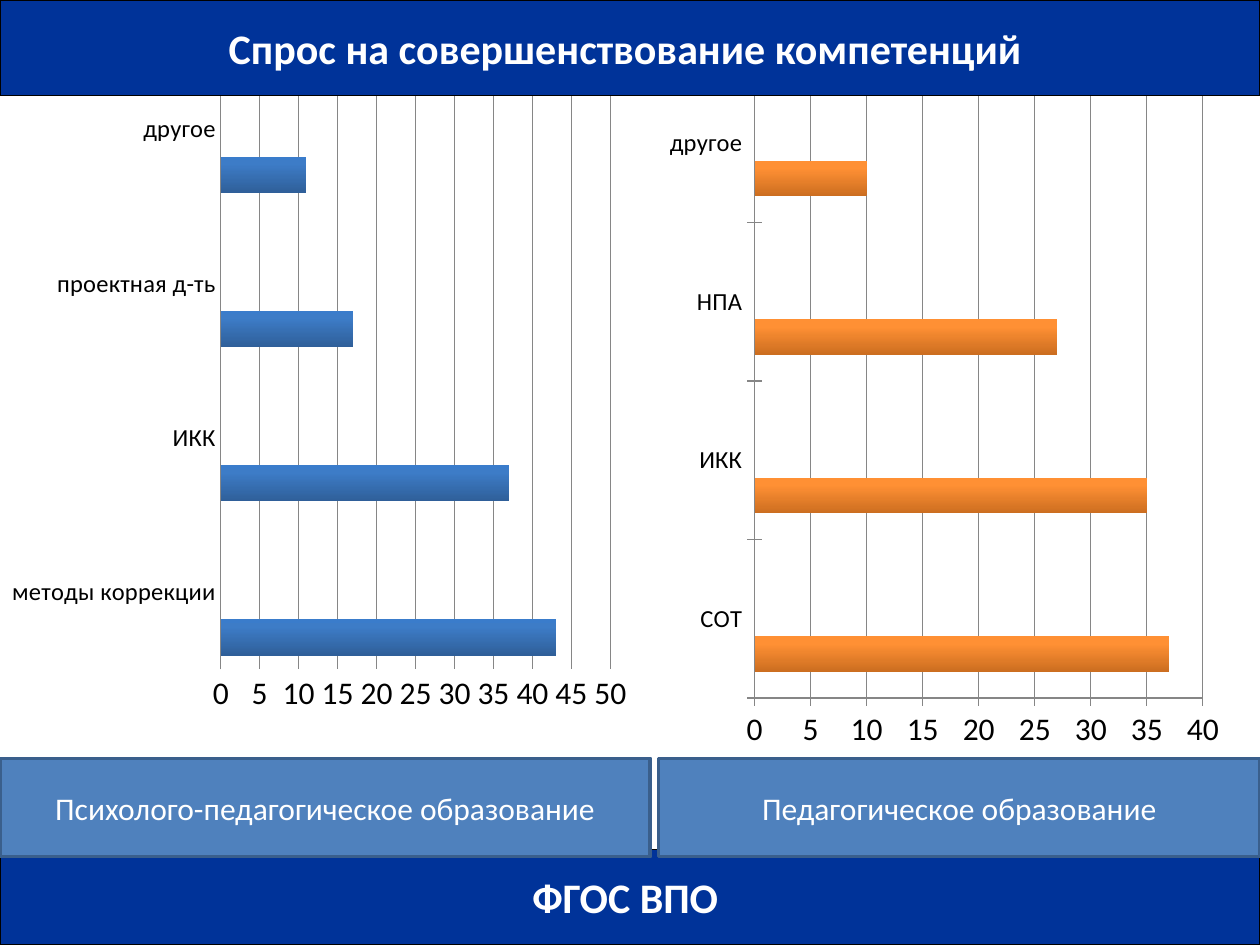
from copy import deepcopy

from lxml.etree import SubElement
from pptx import Presentation
from pptx.chart.data import CategoryChartData
from pptx.dml.color import RGBColor
from pptx.enum.chart import XL_CHART_TYPE, XL_TICK_MARK
from pptx.enum.shapes import MSO_SHAPE
from pptx.enum.text import MSO_ANCHOR, MSO_AUTO_SIZE, PP_ALIGN
from pptx.oxml.ns import qn
from pptx.util import Cm, Pt

FONT = "Calibri"
COLORS = {
    "banner": "003399", "black": "000000", "white": "FFFFFF",
    "box": "4F81BD", "box_line": "3A5F8C", "grid": "868686",
    "second": "C0504D", "third": "9BBB59",
}
WIDTH, HEIGHT, BANNER_HEIGHT = 25.4, 19.05, 1.93
TITLE = "Спрос на совершенствование компетенций "
FOOTER = "ФГОС ВПО "
BOXES = [
    ("Психолого-педагогическое образование", (0, 15.29, 13.11, 1.98)),
    ("Педагогическое образование", (13.28, 15.29, 12.12, 1.98)),
]
PEDAGOGY = {
    "place": (13.28, 0.99, 11.51, 14.38),
    "plot": {"x": 0.168, "y": 0.021, "w": 0.785, "h": 0.889},
    "data": {"СОТ": 37, "ИКК": 35, "НПА": 27, "другое": 10},
    "gradient": [(0, "CC6E20"), (0.8, "FF9034"), (1, "FF9136")],
    "maximum": 40, "gap": 150, "overlap": 0,
    "tick": XL_TICK_MARK.CROSS, "value_line": True,
}
PSYCHOLOGY = {
    "place": (0, 0.79, 12.9, 13.87),
    "plot": {"x": 0.345, "y": 0.019, "w": 0.609, "h": 0.897},
    "data": {"методы коррекции": 43, "ИКК": 37, "проектная д-ть": 17, "другое": 11},
    "gradient": [(0, "2F5F99"), (0.8, "3D7CC7"), (1, "3A7CCB")],
    "maximum": 50, "gap": 75, "overlap": -25,
    "tick": XL_TICK_MARK.NONE, "value_line": False,
}


def rgb(name):
    return RGBColor.from_string(COLORS.get(name, name))


def write_text(shape, text, size=18, bold=False, wrap=True):
    frame = shape.text_frame
    frame.auto_size = MSO_AUTO_SIZE.NONE
    frame.word_wrap = wrap
    frame.vertical_anchor = MSO_ANCHOR.MIDDLE
    paragraph = frame.paragraphs[0]
    paragraph.alignment = PP_ALIGN.CENTER
    run = paragraph.add_run()
    run.text = text
    run.font.name, run.font.size, run.font.bold = FONT, Pt(size), bold
    run.font.color.rgb = rgb("white")


def paint(shape, fill, line, width):
    shape.fill.solid()
    shape.fill.fore_color.rgb = rgb(fill)
    shape.line.color.rgb = rgb(line)
    shape.line.width = Pt(width)


def add_rectangle(slide, place, fill, line, width):
    shape = slide.shapes.add_shape(MSO_SHAPE.RECTANGLE, *map(Cm, place))
    shape.shadow.inherit = False
    paint(shape, fill, line, width)
    return shape


def set_gradient(fill, stops):
    fill.gradient()
    fill.gradient_angle = 90
    stop_list = fill.gradient_stops[0]._gs.getparent()
    stop_list.append(deepcopy(stop_list[-1]))
    for stop, (position, color) in zip(fill.gradient_stops, stops):
        stop.position = position
        stop.color.rgb = rgb(color)


def set_plot_area(chart, plot):
    plot_area = chart._chartSpace.chart.plotArea
    layout = plot_area.find(qn("c:layout"))
    if layout is None:
        layout = SubElement(plot_area, qn("c:layout"))
        plot_area.insert(0, layout)
    manual = SubElement(layout, qn("c:manualLayout"))
    settings = {"layoutTarget": "inner", "xMode": "edge", "yMode": "edge", **plot}
    for tag, value in settings.items():
        SubElement(manual, qn(f"c:{tag}")).set("val", str(value))


def add_bar_chart(slide, settings):
    values = settings["data"]
    data = CategoryChartData()
    data.categories = list(values)
    data.add_series("Series 1", list(values.values()))
    for name in ("Series 2", "Series 3"):
        data.add_series(name, [None] * len(values))
    chart = slide.shapes.add_chart(
        XL_CHART_TYPE.BAR_CLUSTERED, *map(Cm, settings["place"]), data).chart
    chart.has_legend = chart.has_title = False
    chart.font.name, chart.font.size = FONT, Pt(18)
    chart.font.color.rgb = rgb("black")
    set_plot_area(chart, settings["plot"])

    bars = chart.plots[0]
    bars.vary_by_categories = False
    bars.gap_width, bars.overlap = settings["gap"], settings["overlap"]
    first, *others = bars.series
    set_gradient(first.format.fill, settings["gradient"])
    for series, color in zip(others, ("second", "third")):
        series.format.fill.solid()
        series.format.fill.fore_color.rgb = rgb(color)

    category_axis, value_axis = chart.category_axis, chart.value_axis
    category_axis.tick_labels.font.size = Pt(14)
    value_axis.minimum_scale, value_axis.maximum_scale = 0, settings["maximum"]
    value_axis.major_unit = 5
    value_axis.has_major_gridlines = True
    for axis in (category_axis, value_axis):
        axis.major_tick_mark = settings["tick"]
        axis.minor_tick_mark = XL_TICK_MARK.NONE
    for line in (category_axis.format.line, value_axis.format.line,
                 value_axis.major_gridlines.format.line):
        line.color.rgb = rgb("grid")
        line.width = Pt(0.75)
    if not settings["value_line"]:
        value_axis.format.line.fill.background()


def main():
    presentation = Presentation()
    presentation.slide_width, presentation.slide_height = Cm(WIDTH), Cm(HEIGHT)
    slide = presentation.slides.add_slide(presentation.slide_layouts[5])

    add_bar_chart(slide, PEDAGOGY)
    footer_place = (0, HEIGHT - BANNER_HEIGHT, WIDTH, BANNER_HEIGHT)
    footer = add_rectangle(slide, footer_place, "banner", "black", 0.75)
    write_text(footer, FOOTER, size=24, bold=True, wrap=False)
    for text, place in BOXES:
        write_text(add_rectangle(slide, place, "box", "box_line", 2), text)
    add_bar_chart(slide, PSYCHOLOGY)

    title = slide.shapes.title
    title.left, title.top = Cm(0), Cm(0)
    title.width, title.height = Cm(WIDTH), Cm(BANNER_HEIGHT)
    paint(title, "banner", "black", 0.75)
    write_text(title, TITLE, size=24, bold=True, wrap=False)
    title.element.getparent().append(title.element)

    presentation.save("out.pptx")


if __name__ == "__main__":
    main()
